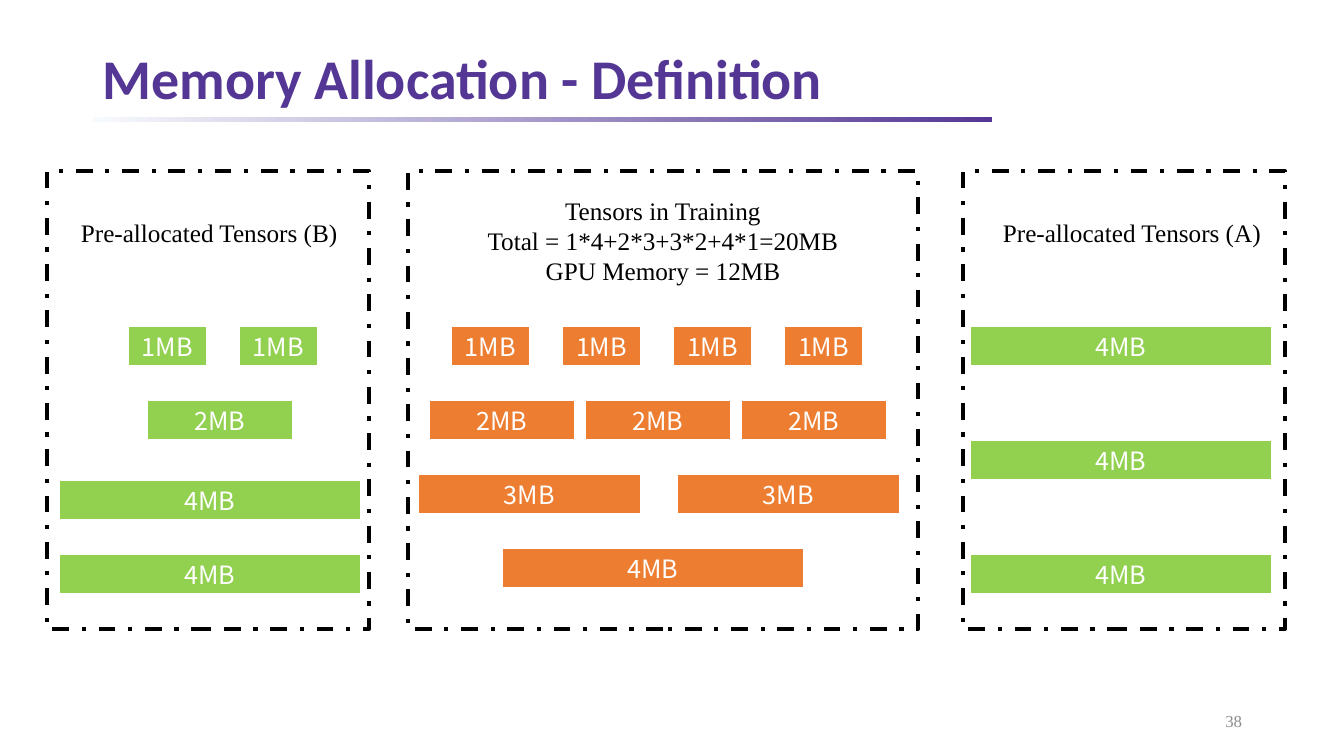
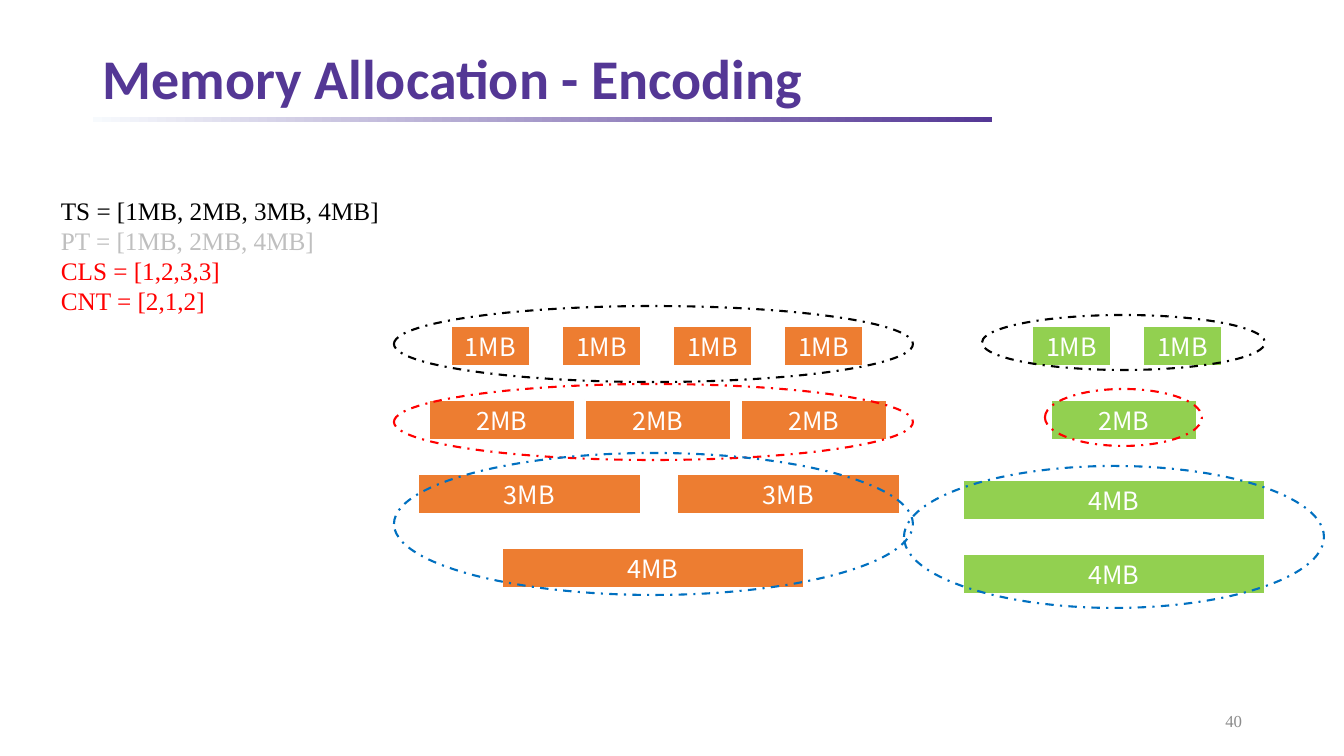
import pptx
import pptx.dml.color
import pptx.enum.dml
import pptx.enum.shapes
import pptx.enum.text
import pptx.util

PX = 914400 / 100.8
SHAPE = pptx.enum.shapes.MSO_SHAPE
ALIGN = pptx.enum.text.PP_ALIGN
MIDDLE = pptx.enum.text.MSO_ANCHOR.MIDDLE

PURPLE, PALE = "543795", "F7FAFD"
ORANGE, GREEN = "ED7D31", "92D050"
BLACK, WHITE, RED, BLUE = "000000", "FFFFFF", "FF0000", "0070C0"
SILVER, GREY = "BFBFBF", "8C8C8C"
SERIF, SANS, TITLE_FONT = "Times New Roman", "Noto Sans CJK SC", "Calibri"

TENSOR_WIDTHS = {1: 79, 2: 146, 3: 223, 4: 302}  # by size in MB
TENSOR_HEIGHT = 40
FIRST_ROW, ROW_PITCH = 326, 74


def px(length):
    return pptx.util.Emu(round(length * PX))


def rgb(color):
    return pptx.dml.color.RGBColor.from_string(color)


def style_text(paragraph, text, font, size, color, align=ALIGN.LEFT, bold=False):
    paragraph.text = text
    paragraph.alignment = align
    paragraph.font.name = font
    paragraph.font.size = pptx.util.Pt(size)
    paragraph.font.color.rgb = rgb(color)
    paragraph.font.bold = bold


def add_shape(slide, kind, left, top, width, height):
    shape = slide.shapes.add_shape(kind, px(left), px(top), px(width), px(height))
    shape.shadow.inherit = False
    return shape


def add_text(slide, left, top, width, height):
    box = slide.shapes.add_textbox(px(left), px(top), px(width), px(height))
    return box.text_frame


def add_fixed_line(slide, left, top, width, height, *style):
    """Add one wrapped, vertically centred line of text."""
    frame = add_text(slide, left, top, width, height)
    frame.word_wrap = True
    frame.vertical_anchor = MIDDLE
    style_text(frame.paragraphs[0], *style)
    return frame.paragraphs[0]


def add_note(slide, left, top, width, height, lines, align=ALIGN.LEFT):
    """Add unwrapped serif text from (text, color) pairs."""
    frame = add_text(slide, left, top, width, height)
    frame.word_wrap = False
    frame.auto_size = pptx.enum.text.MSO_AUTO_SIZE.SHAPE_TO_FIT_TEXT
    for index, (text, color) in enumerate(lines):
        paragraph = frame.add_paragraph() if index else frame.paragraphs[0]
        style_text(paragraph, text, SERIF, 18, color, align)


def add_outline(slide, kind, left, top, width, height, color, weight):
    """Add an unfilled shape with a dash-dot line."""
    outline = add_shape(slide, kind, left, top, width, height)
    outline.fill.background()
    outline.line.color.rgb = rgb(color)
    outline.line.width = pptx.util.Pt(weight)
    outline.line.dash_style = pptx.enum.dml.MSO_LINE.DASH_DOT


def add_tensor(slide, left, top, megabytes, color):
    tensor = add_shape(slide, SHAPE.RECTANGLE, left, top,
                       TENSOR_WIDTHS[megabytes], TENSOR_HEIGHT)
    tensor.fill.solid()
    tensor.fill.fore_color.rgb = rgb(color)
    tensor.line.color.rgb = rgb(WHITE)
    tensor.line.width = pptx.util.Pt(1.5)
    tensor.text_frame.vertical_anchor = MIDDLE
    style_text(tensor.text_frame.paragraphs[0], f"{megabytes}MB",
               SANS, 18, WHITE, ALIGN.CENTER)


def add_tensor_row(slide, left, top, megabytes, color, count=1, pitch=0):
    for index in range(count):
        add_tensor(slide, left + index * pitch, top, megabytes, color)


def add_training_tensors(slide):
    rows = [(451, 1, 4, 111), (429, 2, 3, 156), (418, 3, 2, 259), (502, 4, 1, 0)]
    for index, (left, megabytes, count, pitch) in enumerate(rows):
        add_tensor_row(slide, left, FIRST_ROW + index * ROW_PITCH,
                       megabytes, ORANGE, count, pitch)


def add_preallocated_b(slide, left):
    add_tensor_row(slide, left + 69, FIRST_ROW, 1, GREEN, 2, 111)
    add_tensor_row(slide, left + 88, FIRST_ROW + ROW_PITCH, 2, GREEN)
    for top in (480, 480 + ROW_PITCH):
        add_tensor(slide, left, top, 4, GREEN)


def add_preallocated_a(slide):
    for index in range(3):
        add_tensor(slide, 970, FIRST_ROW + index * 114, 4, GREEN)


def start_slide(deck, title, number):
    """Add a slide with the shared title, gradient rule and page number."""
    slide = deck.slides.add_slide(deck.slide_layouts[6])
    rule = add_shape(slide, SHAPE.RECTANGLE, 93, 117, 899, 5)
    rule.line.fill.background()
    rule.fill.gradient()
    rule.fill.gradient_angle = 0
    for stop, color in zip(rule.fill.gradient_stops, (PALE, PURPLE)):
        stop.color.rgb = rgb(color)
    heading = add_fixed_line(slide, 93, 43, 1159, 76, title, TITLE_FONT, 40,
                             PURPLE, ALIGN.LEFT, True)
    heading.line_spacing = 0.9
    add_fixed_line(slide, 950, 701, 302, 40, number, SERIF, 12, GREY, ALIGN.RIGHT)
    return slide


def build_definition(deck):
    slide = start_slide(deck, "Memory Allocation - Definition", "38")
    add_training_tensors(slide)
    add_preallocated_a(slide)
    add_preallocated_b(slide, 59)
    for left, width in ((47, 322), (408, 510), (963, 322)):
        add_outline(slide, SHAPE.RECTANGLE, left, 171, width, 458, BLACK, 3)
    add_note(slide, 71, 212, 279, 40, [("Pre-allocated Tensors (B)", BLACK)])
    add_note(slide, 993, 212, 281, 40, [("Pre-allocated Tensors (A)", BLACK)])
    add_note(slide, 476, 190, 374, 102, [
        ("Tensors in Training", BLACK),
        ("Total = 1*4+2*3+3*2+4*1=20MB", BLACK),
        ("GPU Memory = 12MB", BLACK),
    ], ALIGN.CENTER)


def build_encoding(deck):
    slide = start_slide(deck, "Memory Allocation - Encoding", "40")
    add_training_tensors(slide)
    add_preallocated_b(slide, 963)
    add_note(slide, 51, 190, 342, 132, [
        ("TS = [1MB, 2MB, 3MB, 4MB]", BLACK),
        ("PT = [1MB, 2MB, 4MB]", SILVER),
        ("CLS = [1,2,3,3]", RED),
        ("CNT = [2,1,2]", RED),
    ])
    size_classes = [
        (BLACK, (394, 306, 519, 76), (982, 315, 283, 55)),
        (RED, (394, 384, 519, 76), (1045, 389, 157, 57)),
        (BLUE, (394, 453, 519, 142), (904, 466, 420, 142)),
    ]
    for color, training, preallocated in size_classes:
        for bounds in (training, preallocated):
            add_outline(slide, SHAPE.OVAL, *bounds, color, 1.5)


def main():
    deck = pptx.Presentation()
    deck.slide_width, deck.slide_height = px(1344), px(756)
    build_definition(deck)
    build_encoding(deck)
    deck.save("out.pptx")


if __name__ == "__main__":
    main()
